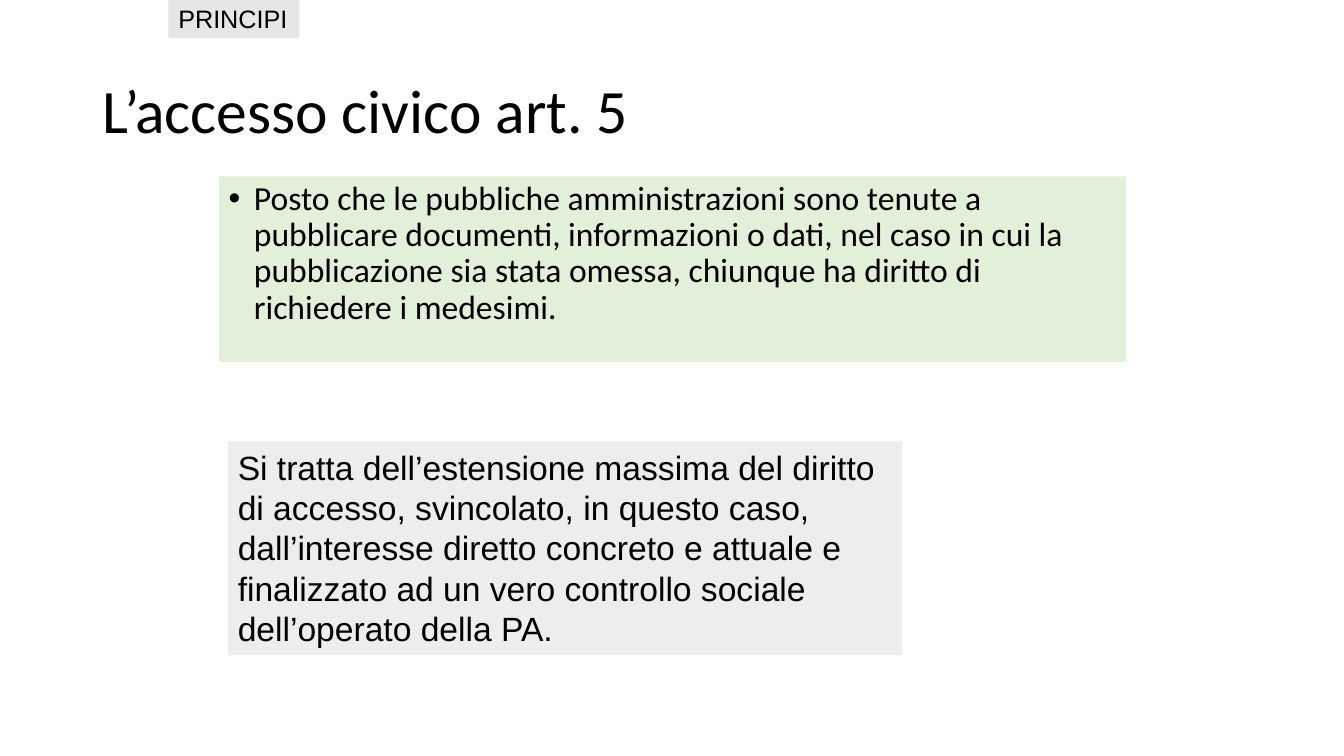
from lxml.etree import SubElement
from pptx import Presentation
from pptx.dml.color import RGBColor
from pptx.enum.text import MSO_ANCHOR as Anchor, MSO_AUTO_SIZE as AutoSize
from pptx.oxml.ns import qn
from pptx.util import Inches, Pt

WIDTH, HEIGHT = 13.33, 7.5
BULLET_INDENT = 0.25

# Boxes are left, top, width, height in inches.
TITLE = {
    "text": "L’accesso civico art. 5",
    "box": (0.92, 0.4, 11.5, 1.45),
    "font": {"name": "Calibri", "size": Pt(44)},
    "frame": {"vertical_anchor": Anchor.MIDDLE},
    "paragraph": {"line_spacing": 0.9},
}
RULE = {
    "text": "Posto che le pubbliche amministrazioni sono tenute a pubblicare "
            "documenti, informazioni o dati, nel caso in cui la pubblicazione "
            "sia stata omessa, chiunque ha diritto di richiedere i medesimi.",
    "box": (2.17, 1.75, 9, 1.84),
    "fill": "E2F0D9",
    "font": {"name": "Calibri", "size": Pt(24)},
    "paragraph": {"line_spacing": 0.9, "space_before": Pt(10)},
    "bullet": "•",
}
COMMENT = {
    "text": "Si tratta dell’estensione massima del diritto di accesso, "
            "svincolato, in questo caso, dall’interesse diretto concreto e "
            "attuale e finalizzato ad un vero controllo sociale dell’operato "
            "della PA.",
    "box": (2.26, 4.38, 6.69, 2.12),
    "fill": "EDEDED",
    "font": {"name": "Arial", "size": Pt(24)},
    "frame": {"auto_size": AutoSize.SHAPE_TO_FIT_TEXT},
}
SECTION = {
    "text": "PRINCIPI",
    "box": (1.67, -0.02, 1.3, 0.4),
    "fill": "E7E6E6",
    "font": {"name": "Arial", "size": Pt(18)},
    "frame": {"auto_size": AutoSize.SHAPE_TO_FIT_TEXT, "word_wrap": False},
}


def color(hex_code):
    return RGBColor.from_string(hex_code)


def apply(target, values):
    for name, value in values.items():
        setattr(target, name, value)


def add_bullet(paragraph, mark):
    """Give the paragraph a bullet with a hanging indent."""
    properties = paragraph._p.get_or_add_pPr()
    properties.set("marL", str(Inches(BULLET_INDENT)))
    properties.set("indent", str(-Inches(BULLET_INDENT)))
    SubElement(properties, qn("a:buFont"), typeface="Arial")
    SubElement(properties, qn("a:buChar"), char=mark)


def add_block(slide, block):
    shape = slide.shapes.add_textbox(*map(Inches, block["box"]))
    if "fill" in block:
        shape.fill.solid()
        shape.fill.fore_color.rgb = color(block["fill"])
    frame = shape.text_frame
    apply(frame, {"word_wrap": True, **block.get("frame", {})})
    paragraph = frame.paragraphs[0]
    apply(paragraph, block.get("paragraph", {}))
    if "bullet" in block:
        add_bullet(paragraph, block["bullet"])
    run = paragraph.add_run()
    run.text = block["text"]
    apply(run.font, block["font"])
    run.font.color.rgb = color("000000")


def main():
    deck = Presentation()
    deck.slide_width, deck.slide_height = Inches(WIDTH), Inches(HEIGHT)
    slide = deck.slides.add_slide(deck.slide_layouts[6])
    for block in (TITLE, RULE, COMMENT, SECTION):
        add_block(slide, block)
    deck.save("out.pptx")


if __name__ == "__main__":
    main()
